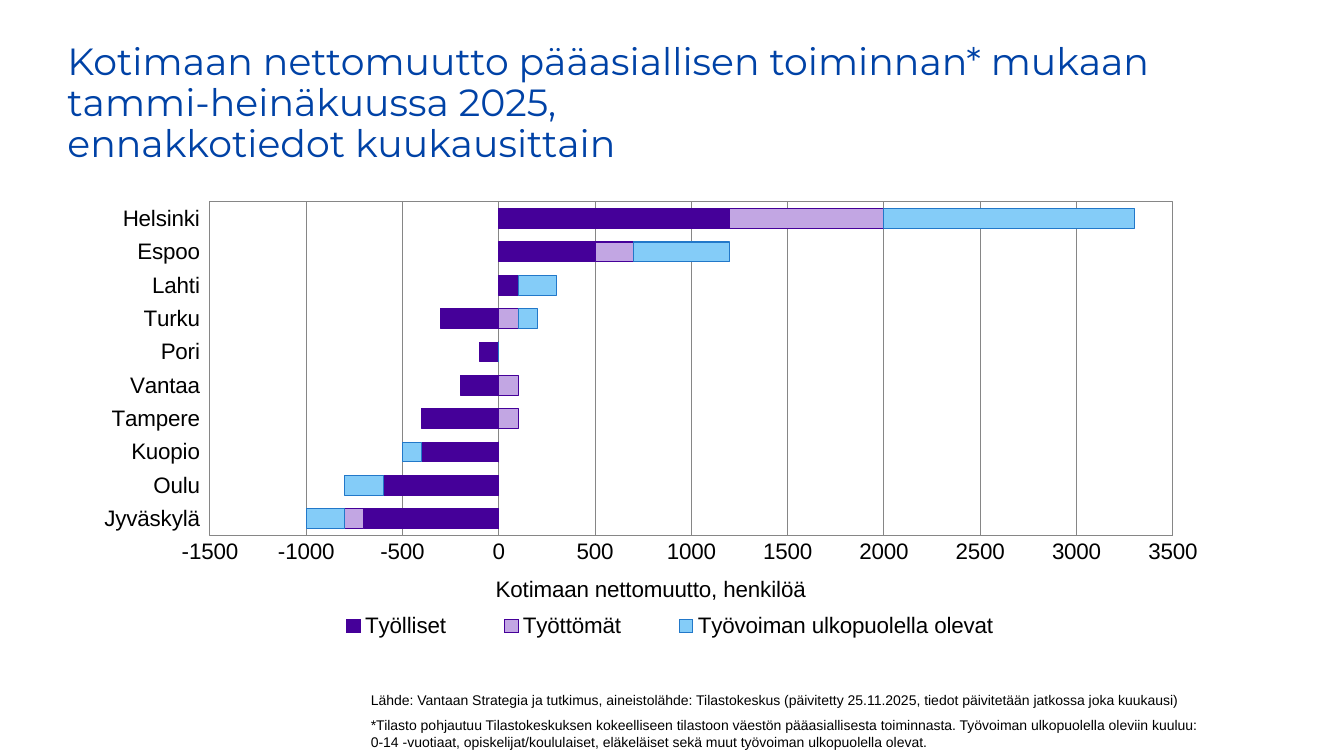
from lxml import etree
from pptx import Presentation
from pptx.chart.data import CategoryChartData
from pptx.dml.color import RGBColor
from pptx.enum.chart import XL_CHART_TYPE, XL_LEGEND_POSITION, XL_TICK_LABEL_POSITION, XL_TICK_MARK
from pptx.enum.text import MSO_ANCHOR
from pptx.oxml import parse_xml
from pptx.oxml.ns import nsdecls, qn
from pptx.util import Inches, Pt

STACKED_BAR = XL_CHART_TYPE.BAR_STACKED
BOTTOM = XL_LEGEND_POSITION.BOTTOM
LABELS_LOW = XL_TICK_LABEL_POSITION.LOW
NO_TICK = XL_TICK_MARK.NONE
TOP, MIDDLE = MSO_ANCHOR.TOP, MSO_ANCHOR.MIDDLE

# Content
TITLE = [
    "Kotimaan nettomuutto pääasiallisen toiminnan* mukaan "
    "tammi-heinäkuussa 2025,\vennakkotiedot kuukausittain",
]
NOTES = [
    "Lähde: Vantaan Strategia ja tutkimus, aineistolähde: Tilastokeskus "
    "(päivitetty 25.11.2025, tiedot päivitetään jatkossa joka kuukausi)",
    "*Tilasto pohjautuu Tilastokeskuksen kokeelliseen tilastoon väestön "
    "pääasiallisesta toiminnasta. Työvoiman ulkopuolella oleviin kuuluu: "
    "0-14 -vuotiaat, opiskelijat/koululaiset, eläkeläiset sekä muut "
    "työvoiman ulkopuolella olevat.",
]
AXIS_TITLE = "Kotimaan nettomuutto, henkilöä"
SERIES = [  # name, fill, outline
    ("Työlliset", "450099", "450099"),
    ("Työttömät", "C2A6E3", "450099"),
    ("Työvoiman ulkopuolella olevat", "84CCF8", "2278C9"),
]
CITIES = {  # from the bottom bar upwards, one value per series
    "Jyväskylä": (-700, -100, -200),
    "Oulu": (-600, 0, -200),
    "Kuopio": (-400, 0, -100),
    "Tampere": (-400, 100, 0),
    "Vantaa": (-200, 100, 0),
    "Pori": (-100, 0, 0),
    "Turku": (-300, 100, 100),
    "Lahti": (100, 0, 200),
    "Espoo": (500, 200, 500),
    "Helsinki": (1200, 800, 1300),
}

# Formats
BLUE, BLACK, GREY = "0042A6", "000000", "868686"
TITLE_FONT = {"name": "Montserrat", "size": Pt(27), "bold": False}
NOTE_FONT = {"name": "Arial", "size": Pt(10), "bold": False}
CHART_FONT = {"name": "Arial", "size": Pt(16), "bold": False}
VALUE_SCALE = {"minimum_scale": -1500, "maximum_scale": 3500, "major_unit": 500}


def color(hex_text):
    return RGBColor.from_string(hex_text)


def apply(target, values):
    for name, value in values.items():
        setattr(target, name, value)


def set_font(font, values, hex_text):
    apply(font, values)
    font.color.rgb = color(hex_text)


def set_line(line, hex_text):
    line.color.rgb = color(hex_text)
    line.width = Pt(0.75)


def add_text(page, place, texts, font, hex_text, anchor, line_spacing, gap):
    frame = page.shapes.add_textbox(*map(Inches, place)).text_frame
    apply(frame, {"word_wrap": True, "vertical_anchor": anchor})
    for index, text in enumerate(texts):
        para = frame.paragraphs[0] if index == 0 else frame.add_paragraph()
        para.text = text
        para.line_spacing = line_spacing
        para.space_before = Pt(gap if index else 0)
        for span in para.runs:
            set_font(span.font, font, hex_text)


def place_part(part, inner=False, **fractions):
    """Give a chart part a fixed place, as fractions of the chart."""
    for old in part.findall(qn("c:layout")):
        part.remove(old)
    layout = etree.Element(qn("c:layout"))
    manual = etree.SubElement(layout, qn("c:manualLayout"))
    settings = {"layoutTarget": "inner"} if inner else {}
    settings.update(xMode="edge", yMode="edge", **fractions)
    for name, value in settings.items():
        etree.SubElement(manual, qn("c:" + name)).set("val", str(value))
    before = [part.find(qn("c:" + tag)) for tag in ("tx", "legendPos")]
    position = max((part.index(item) + 1 for item in before if item is not None), default=0)
    part.insert(position, layout)


def add_migration_chart(page):
    data = CategoryChartData()
    data.categories = list(CITIES)
    for (name, _, _), values in zip(SERIES, zip(*CITIES.values())):
        data.add_series(name, values)
    place = map(Inches, (0.61, 1.87, 11.5, 4.56))
    chart = page.shapes.add_chart(STACKED_BAR, *place, data).chart
    chart.has_title = False
    set_font(chart.font, CHART_FONT, BLACK)

    # Bars
    plot = chart.plots[0]
    apply(plot, {"gap_width": 70, "overlap": 100, "vary_by_categories": False})
    for series, (_, fill, outline) in zip(plot.series, SERIES):
        series.invert_if_negative = False
        series.format.fill.solid()
        series.format.fill.fore_color.rgb = color(fill)
        set_line(series.format.line, outline)

    # Axes
    cities, values = chart.category_axis, chart.value_axis
    for axis in (cities, values):
        apply(axis, {"major_tick_mark": NO_TICK, "minor_tick_mark": NO_TICK})
        set_font(axis.tick_labels.font, CHART_FONT, BLACK)
        set_line(axis.format.line, GREY)
    cities.tick_label_position = LABELS_LOW
    apply(values, VALUE_SCALE)
    apply(values.tick_labels, {"number_format": "0", "number_format_is_linked": False})
    values.has_major_gridlines = True
    set_line(values.major_gridlines.format.line, GREY)
    axis_title = values.axis_title
    axis_title.text_frame.text = AXIS_TITLE
    set_font(axis_title.text_frame.paragraphs[0].runs[0].font, CHART_FONT, BLACK)

    # Legend
    chart.has_legend = True
    apply(chart.legend, {"position": BOTTOM, "include_in_layout": False})
    set_font(chart.legend.font, CHART_FONT, BLACK)

    # Places within the chart and the frame round the bars
    area = chart.element.find(".//" + qn("c:plotArea"))
    place_part(area, inner=True, x=0.128, y=0.029, w=0.8305, h=0.726)
    place_part(area.find(".//" + qn("c:title")), x=0.371, y=0.832)
    place_part(chart.element.find(".//" + qn("c:legend")), x=0.202, y=0.912, w=0.646, h=0.08)
    area.append(parse_xml(
        f'<c:spPr {nsdecls("c", "a")}><a:noFill/><a:ln w="{Pt(0.75)}">'
        f'<a:solidFill><a:srgbClr val="{GREY}"/></a:solidFill></a:ln></c:spPr>'))


def main():
    deck = Presentation()
    deck.slide_width, deck.slide_height = Inches(13.33), Inches(7.5)
    page = deck.slides.add_slide(deck.slide_layouts[6])
    add_text(page, (0.57, 0.41, 11.22, 1.25), TITLE, TITLE_FONT, BLUE, MIDDLE, 0.9, 0)
    add_text(page, (3.58, 6.81, 8.53, 0.62), NOTES, NOTE_FONT, BLACK, TOP, 1.0, 6)
    add_migration_chart(page)
    deck.save("out.pptx")


if __name__ == "__main__":
    main()
